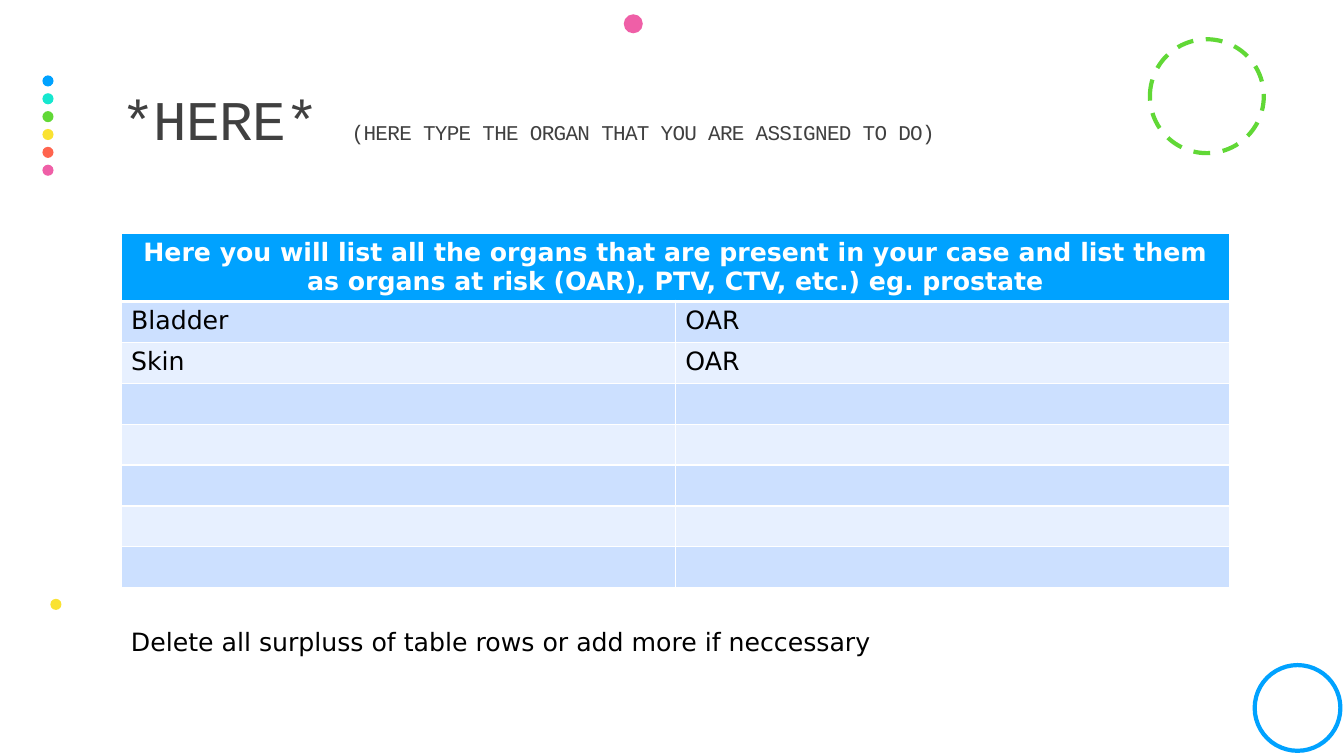
from dataclasses import dataclass

from lxml.etree import SubElement
from pptx import Presentation
from pptx.dml.color import RGBColor
from pptx.enum.dml import MSO_LINE
from pptx.enum.shapes import MSO_SHAPE
from pptx.enum.text import MSO_ANCHOR, MSO_AUTO_SIZE, PP_ALIGN
from pptx.oxml.ns import qn
from pptx.slide import Slide
from pptx.table import _Cell
from pptx.text.text import _Paragraph
from pptx.util import Cm, Pt

BLUE, GREEN, YELLOW, PINK = "00A2FF", "61D836", "FAE232", "EF5FA7"
WHITE, BLACK, GREY = "FFFFFF", "000000", "404040"
BANDS = ("CCE0FF", "E7F0FF")
BODY_FONT, TITLE_FONT = "DejaVu Sans", "Courier New"
MARGIN, CONTENT_WIDTH = 3.05, 27.94


@dataclass
class Circle:
    left: float
    top: float
    size: float
    color: str
    filled: bool = True
    dashed: bool = False


def rgb(value: str) -> RGBColor:
    return RGBColor.from_string(value)


def add_circle(page: Slide, circle: Circle) -> None:
    shape = page.shapes.add_shape(MSO_SHAPE.OVAL, Cm(circle.left), Cm(circle.top),
                                  Cm(circle.size), Cm(circle.size))
    shape.shadow.inherit = False
    if circle.filled:
        shape.fill.solid()
        shape.fill.fore_color.rgb = rgb(circle.color)
        shape.line.fill.background()
        return
    shape.fill.background()
    shape.line.color.rgb = rgb(circle.color)
    shape.line.width = Pt(3)
    if circle.dashed:
        shape.line.dash_style = MSO_LINE.DASH


def add_span(para: _Paragraph, text: str, size: float, color: str,
             font: str = BODY_FONT, bold: bool = False, spacing: int = 0) -> None:
    span = para.add_run()
    span.text = text
    span.font.size = Pt(size)
    span.font.name = font
    span.font.bold = bold
    span.font.color.rgb = rgb(color)
    if spacing:
        span.font._element.set("spc", str(spacing))


def set_borders(cell: _Cell, top: float, bottom: float) -> None:
    properties = cell._tc.get_or_add_tcPr()
    for side, width in (("L", 1), ("R", 1), ("T", top), ("B", bottom)):
        line = SubElement(properties, qn(f"a:ln{side}"), w=str(Pt(width)))
        fill = SubElement(line, qn("a:solidFill"))
        SubElement(fill, qn("a:srgbClr"), val=WHITE)


def add_title(page: Slide) -> None:
    title = page.shapes.title
    title.left, title.top = Cm(MARGIN), Cm(1.17)
    title.width, title.height = Cm(CONTENT_WIDTH), Cm(3.81)
    frame = title.text_frame
    frame.auto_size = MSO_AUTO_SIZE.NONE
    frame.word_wrap = True
    frame.vertical_anchor = MSO_ANCHOR.MIDDLE
    frame.margin_left = frame.margin_right = 0
    para = frame.paragraphs[0]
    para.alignment = PP_ALIGN.LEFT
    para.line_spacing = 0.9
    for text, size in (("*HERE* ", 40),
                       ("(HERE TYPE THE ORGAN THAT YOU ARE ASSIGNED TO DO)", 15)):
        add_span(para, text, size, GREY, TITLE_FONT, spacing=-50)


def add_organ_table(page: Slide, heading: str, organs: list[tuple[str, str]],
                    empty_rows: int) -> None:
    rows = [(heading, ""), *organs, *[("", "")] * empty_rows]
    header_height, row_height = 1.68, 1.03
    table = page.shapes.add_table(
        len(rows), 2, Cm(MARGIN), Cm(5.87), Cm(CONTENT_WIDTH),
        Cm(header_height + row_height * (len(rows) - 1))).table
    for index, texts in enumerate(rows):
        header = index == 0
        table.rows[index].height = Cm(header_height if header else row_height)
        for cell, text in zip(table.rows[index].cells, texts):
            set_borders(cell, top=3 if index == 1 else 1, bottom=3 if header else 1)
            cell.fill.solid()
            cell.fill.fore_color.rgb = rgb(BLUE if header else BANDS[(index - 1) % 2])
            para = cell.text_frame.paragraphs[0]
            para.alignment = PP_ALIGN.CENTER if header else PP_ALIGN.LEFT
            if text:
                add_span(para, text, 18, WHITE if header else BLACK, bold=header)
    table.cell(0, 0).merge(table.cell(0, 1))


def add_note(page: Slide, text: str) -> None:
    box = page.shapes.add_textbox(Cm(MARGIN), Cm(15.65), Cm(CONTENT_WIDTH), Cm(1.03))
    box.text_frame.word_wrap = True
    box.text_frame.auto_size = MSO_AUTO_SIZE.SHAPE_TO_FIT_TEXT
    add_span(box.text_frame.paragraphs[0], text, 18, BLACK)


def main() -> None:
    deck = Presentation()
    deck.slide_width, deck.slide_height = Cm(33.87), Cm(19.05)
    page = deck.slides.add_slide(deck.slide_layouts[5])

    # Decoration: column of dots, then the loose circles
    dot_colors = (BLUE, "16E7CF", GREEN, YELLOW, "FF644E", PINK)
    dots = [Circle(1.07, 1.9 + 0.45 * index, 0.28, color)
            for index, color in enumerate(dot_colors)]
    loose = [
        Circle(28.98, 0.99, 2.87, GREEN, filled=False, dashed=True),
        Circle(15.72, 0.36, 0.48, PINK),
        Circle(1.27, 15.09, 0.28, YELLOW),
        Circle(31.62, 16.76, 2.16, BLUE, filled=False),
    ]
    for circle in dots + loose:
        add_circle(page, circle)

    # Content
    add_title(page)
    add_organ_table(
        page,
        "Here you will list all the organs that are present in your case and list "
        "them as organs at risk (OAR), PTV, CTV, etc.) eg. prostate",
        [("Bladder", "OAR"), ("Skin", "OAR")], empty_rows=5)
    add_note(page, "Delete all surpluss of table rows or add more if neccessary")

    deck.save("out.pptx")


if __name__ == "__main__":
    main()
